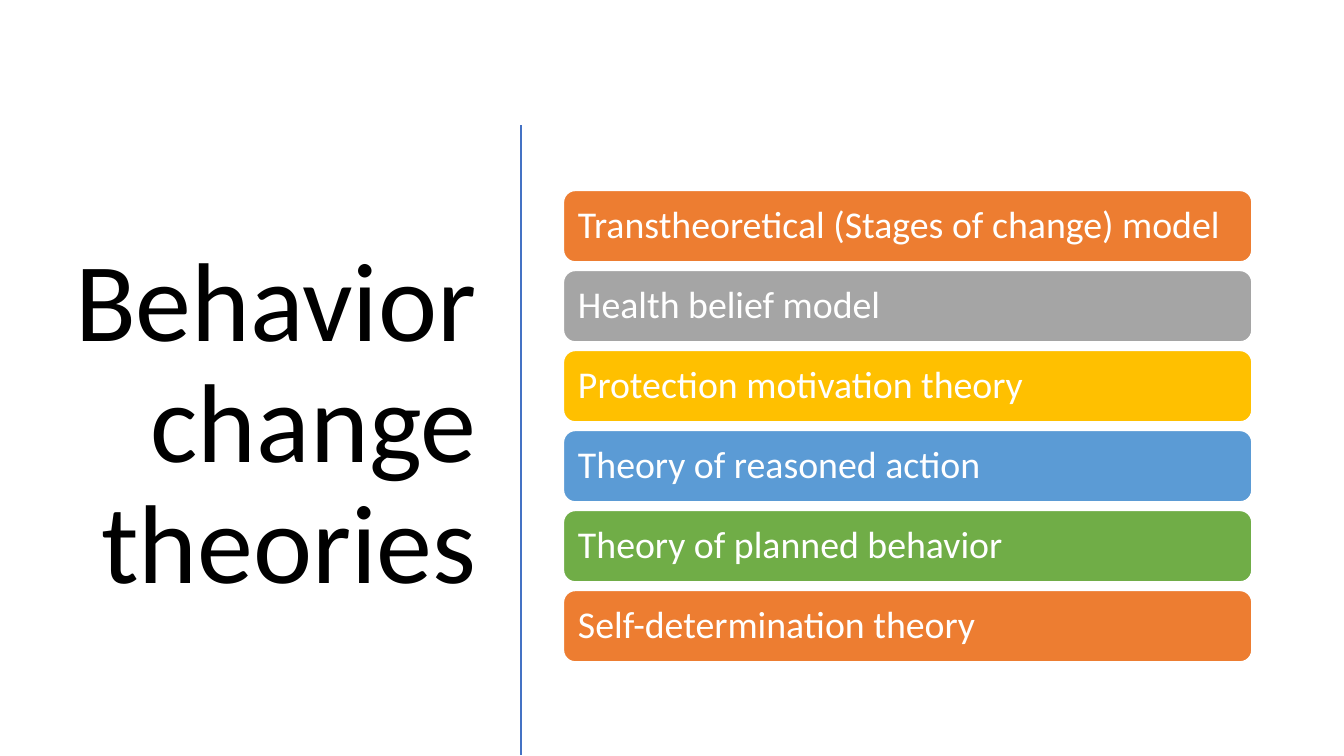
from lxml import etree
from pptx import Presentation
from pptx.dml.color import RGBColor
from pptx.enum import shapes, text
from pptx.oxml.ns import qn
from pptx.util import Cm, Pt

CARDS = [
    ("Transtheoretical (Stages of change) model", "ED7D31"),
    ("Health belief model", "A5A5A5"),
    ("Protection motivation theory", "FFC000"),
    ("Theory of reasoned action", "5B9BD5"),
    ("Theory of planned behavior", "70AD47"),
    ("Self-determination theory", "ED7D31"),
]


def tint(item, code):
    """Give a fill, line or font a solid colour from a hex string."""
    if hasattr(item, "solid"):
        item.solid()
        item = item.fore_color
    else:
        item = item.color
    item.rgb = RGBColor.from_string(code)


def place(shape, box):
    """Move a shape to a box given in centimetres."""
    for name, size in zip(("left", "top", "width", "height"), box):
        setattr(shape, name, Cm(size))


def write(shape, words, size, code, align, pad):
    """Put one formatted paragraph in a shape."""
    frame = shape.text_frame
    frame.text = words
    para = frame.paragraphs[0]
    sides = {f"margin_{side}": Cm(pad) for side in ("left", "top", "right", "bottom")}
    formats = [
        (frame, {"word_wrap": True, "auto_size": text.MSO_AUTO_SIZE.NONE,
                 "vertical_anchor": text.MSO_ANCHOR.MIDDLE, **sides}),
        (para, {"alignment": align, "line_spacing": 0.9}),
        (para.runs[0].font, {"name": "Calibri", "size": Pt(size)}),
    ]
    for item, values in formats:
        for name, value in values.items():
            setattr(item, name, value)
    tint(para.runs[0].font, code)


def head(slide, box):
    """Place the right-aligned title in its box."""
    place(slide.shapes.title, box)
    write(slide.shapes.title, "Behavior change theories", 80, "000000",
          text.PP_ALIGN.RIGHT, 0.25)


def rule(slide, box):
    """Draw the upright divider along the left edge of its box."""
    x, y, _, h = box
    line = slide.shapes.add_connector(
        shapes.MSO_CONNECTOR.STRAIGHT, Cm(x), Cm(y), Cm(x), Cm(y + h))
    line.line.width = Pt(2)
    tint(line.line, "4472C4")
    etree.SubElement(line._element.spPr, qn("a:effectLst"))


def stack(slide, box, tall):
    """Spread the theory cards evenly down the box."""
    x, y, w, h = box
    step = (h - tall) / (len(CARDS) - 1)
    for i, (words, code) in enumerate(CARDS):
        card = slide.shapes.add_shape(shapes.MSO_SHAPE.ROUNDED_RECTANGLE, 0, 0, 0, 0)
        place(card, (x, y + i * step, w, tall))
        card.shadow.inherit = False
        card.line.width = Pt(1)
        tint(card.fill, code)
        tint(card.line, "FFFFFF")
        write(card, words, 27, "FFFFFF", text.PP_ALIGN.LEFT, 0.28)


def main():
    """Build and save the slide."""
    deck = Presentation()
    deck.slide_width, deck.slide_height = Cm(33.87), Cm(19.05)
    slide = deck.slides.add_slide(deck.slide_layouts[5])
    tint(slide.background.fill, "FFFFFF")
    head(slide, (1.32, 2.97, 10.95, 15.52))
    rule(slide, (13.13, 3.15, 0, 15.88))
    stack(slide, (14.2, 4.8, 17.35, 11.88), 1.8)
    deck.save("out.pptx")


if __name__ == "__main__":
    main()
